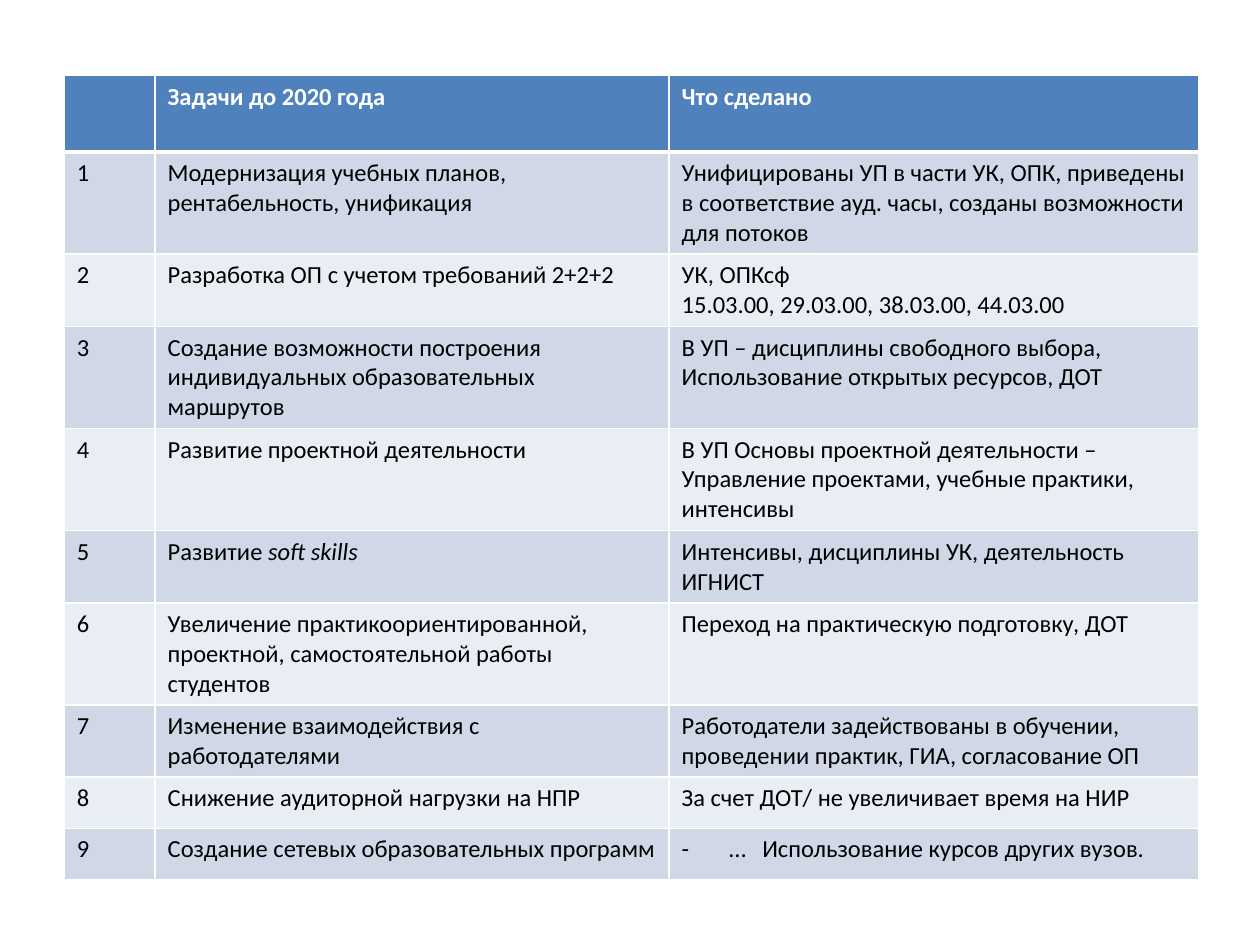
from lxml.etree import SubElement
from pptx import Presentation
from pptx.dml.color import RGBColor
from pptx.oxml.ns import qn
from pptx.util import Pt

WHITE = RGBColor(0xFF, 0xFF, 0xFF)
BLACK = RGBColor(0x00, 0x00, 0x00)
BLUE = RGBColor(0x4F, 0x81, 0xBD)
BAND_DARK = RGBColor(0xD0, 0xD8, 0xE8)
BAND_LIGHT = RGBColor(0xE9, 0xED, 0xF4)

HEADER_FONT = {"name": "Calibri", "size": Pt(14), "bold": True}
BODY_FONT = {"name": "Calibri", "size": Pt(14), "bold": False}
COLUMN_WIDTHS = (51.84, 293.76, 302.4)
HEADER_HEIGHT = 43.7
ROW_HEIGHT = 29.2
TAB_STOPS = (27, 46)

HEADINGS = ("", "Задачи до 2020 года", "Что сделано")
TASKS = (
    ("Модернизация учебных планов, рентабельность, унификация",
     "Унифицированы УП в части УК, ОПК, приведены в соответствие ауд. часы, "
     "созданы возможности для потоков"),
    ("Разработка ОП с учетом требований 2+2+2",
     "УК, ОПКсф\n15.03.00, 29.03.00, 38.03.00, 44.03.00"),
    ("Создание возможности построения индивидуальных образовательных маршрутов",
     "В УП – дисциплины свободного выбора,\nИспользование открытых ресурсов, ДОТ"),
    ("Развитие проектной деятельности",
     "В УП Основы проектной деятельности – Управление проектами, "
     "учебные практики, интенсивы"),
    ("Развитие *soft skills*",
     "Интенсивы, дисциплины УК, деятельность ИГНИСТ"),
    ("Увеличение практикоориентированной, проектной, самостоятельной работы студентов",
     "Переход на практическую подготовку, ДОТ"),
    ("Изменение взаимодействия с работодателями",
     "Работодатели задействованы в обучении, проведении практик, ГИА, согласование ОП"),
    ("Снижение аудиторной нагрузки на НПР",
     "За счет ДОТ/ не увеличивает время на НИР"),
    ("Создание сетевых образовательных программ",
     "-\t…\tИспользование курсов других вузов."),
)


def apply_font(font, values, color):
    for name, value in values.items():
        setattr(font, name, value)
    font.color.rgb = color


def add_tab_stops(paragraph):
    tab_list = SubElement(paragraph._p.get_or_add_pPr(), qn("a:tabLst"))
    for position in TAB_STOPS:
        SubElement(tab_list, qn("a:tab"), pos=str(Pt(position)), algn="l")


def write_text(cell, text, font_values, color):
    text_frame = cell.text_frame
    for index, line in enumerate(text.split("\n")):
        paragraph = text_frame.add_paragraph() if index else text_frame.paragraphs[0]
        if "\t" in line:
            add_tab_stops(paragraph)
        apply_font(paragraph.font, font_values, color)
        for part_index, part in enumerate(line.split("*")):
            if part:
                run = paragraph.add_run()
                run.text = part
                apply_font(run.font, font_values, color)
                run.font.italic = part_index % 2 == 1


def set_borders(cell, top, bottom):
    properties = cell._tc.get_or_add_tcPr()
    widths = {"a:lnL": 1, "a:lnR": 1, "a:lnT": top, "a:lnB": bottom}
    for index, (tag, width) in enumerate(widths.items()):
        line = properties.makeelement(qn(tag), {"w": str(Pt(width))})
        fill = SubElement(line, qn("a:solidFill"))
        SubElement(fill, qn("a:srgbClr"), val=str(WHITE))
        properties.insert(index, line)


def fill_row(table, row_index, texts):
    is_header = row_index == 0
    band = BAND_DARK if row_index % 2 else BAND_LIGHT
    for cell, text in zip(table.rows[row_index].cells, texts):
        cell.fill.solid()
        cell.fill.fore_color.rgb = BLUE if is_header else band
        set_borders(cell, 3 if row_index == 1 else 1, 3 if is_header else 1)
        write_text(cell, text, HEADER_FONT if is_header else BODY_FONT,
                   WHITE if is_header else BLACK)


def add_task_table(slide):
    rows = [HEADINGS]
    rows += [(str(number), *task) for number, task in enumerate(TASKS, 1)]
    height = HEADER_HEIGHT + ROW_HEIGHT * len(TASKS)
    table = slide.shapes.add_table(
        len(rows), len(COLUMN_WIDTHS), Pt(36.8), Pt(43.2),
        Pt(sum(COLUMN_WIDTHS)), Pt(height)).table
    for column, width in zip(table.columns, COLUMN_WIDTHS):
        column.width = Pt(width)
    for index, texts in enumerate(rows):
        table.rows[index].height = Pt(ROW_HEIGHT if index else HEADER_HEIGHT)
        fill_row(table, index, texts)


def main():
    presentation = Presentation()
    presentation.slide_width = Pt(720)
    presentation.slide_height = Pt(540)
    slide = presentation.slides.add_slide(presentation.slide_layouts[6])
    add_task_table(slide)
    presentation.save("out.pptx")


if __name__ == "__main__":
    main()
